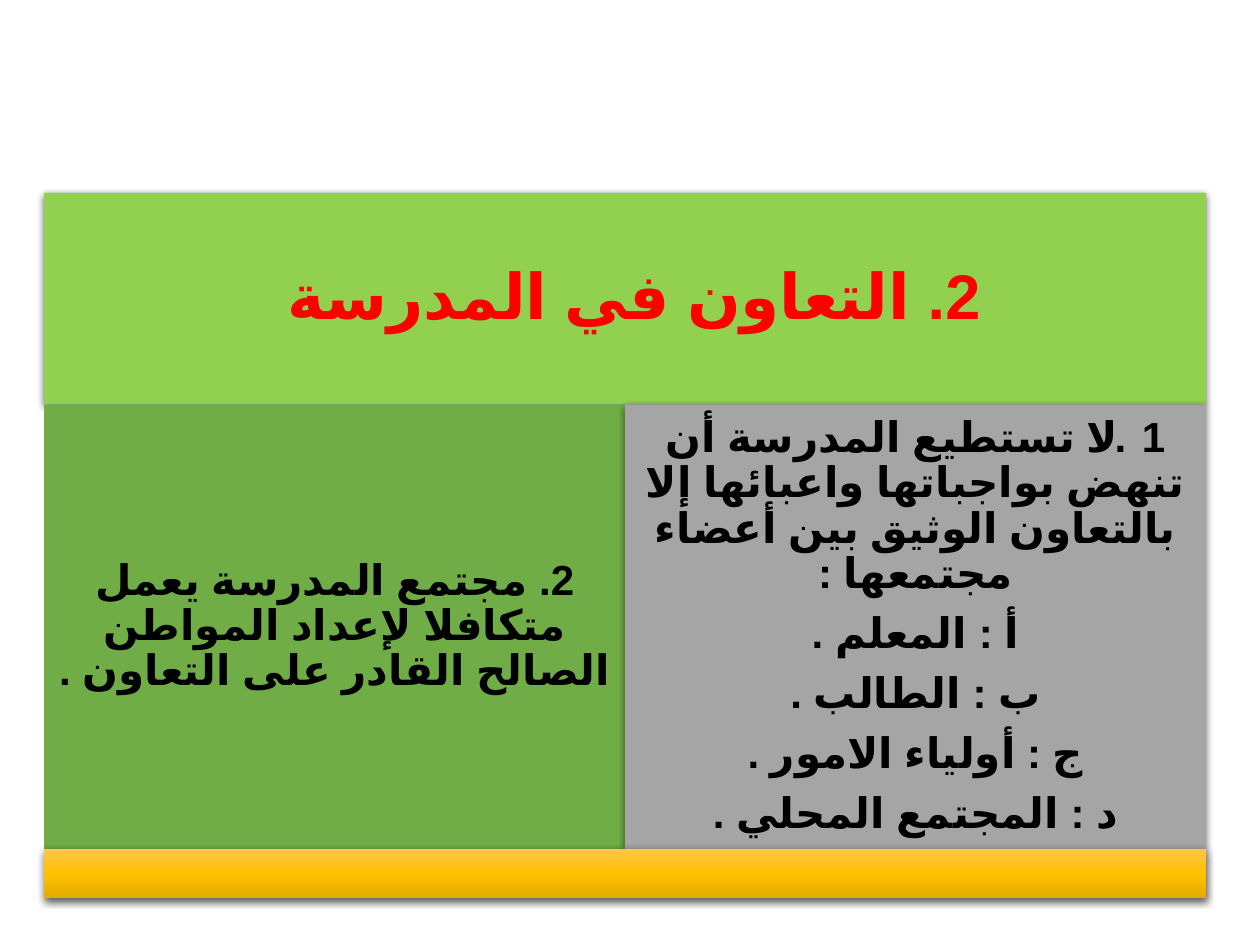
from copy import deepcopy
from dataclasses import dataclass

from lxml.etree import SubElement
from pptx import Presentation
from pptx.dml.color import RGBColor as RGB
from pptx.enum.shapes import MSO_SHAPE as SHAPE
from pptx.enum.text import MSO_ANCHOR as ANCHOR, PP_ALIGN as ALIGN
from pptx.oxml.ns import qn
from pptx.util import Inches, Pt


@dataclass(frozen=True)
class Theme:
    font: str = "Calibri"
    arabic_font: str = "Arial"
    title_size: int = 36
    body_size: int = 24
    title: str = "FF0000"
    body: str = "000000"
    header: str = "92D050"
    left: str = "70AD47"
    right: str = "A5A5A5"
    bar: tuple = ("FFC64B", "FFC000", "E3AB00")


def add_text(sp, lines, size, color, inset):
    """Fill the shape with centred right-to-left paragraphs, one per line."""
    tf = sp.text_frame
    tf.word_wrap = True
    tf.vertical_anchor = ANCHOR.MIDDLE
    tf.margin_left = tf.margin_right = tf.margin_top = tf.margin_bottom = Inches(inset)
    for i, line in enumerate(lines):
        p = tf.add_paragraph() if i else tf.paragraphs[0]
        p.alignment = ALIGN.CENTER
        p.line_spacing = 0.9
        p.space_after = Pt(size * 0.35)
        p._p.get_or_add_pPr().set("rtl", "1")
        r = p.add_run()
        r.text = line
        r.font.name, r.font.size, r.font.bold = theme.font, Pt(size), True
        r.font.color.rgb = RGB.from_string(color)
        props = r._r.get_or_add_rPr()
        props.set("lang", "ar-IQ")
        SubElement(props, qn("a:cs"), typeface=theme.arabic_font)


def add_block(col, row, span, fill, shadow=True):
    """Place a rectangle on the grid; a tuple of colours makes a downward gradient."""
    sp = slide.shapes.add_shape(
        SHAPE.RECTANGLE, Inches(LEFT + col * COL_W), Inches(ROWS[row]),
        Inches(span * COL_W), Inches(ROWS[row + 1] - ROWS[row]))
    sp.line.fill.background()
    sp.shadow.inherit = False
    if isinstance(fill, tuple):
        sp.fill.gradient()
        sp.fill.gradient_angle = 270
        stops = sp._element.spPr.find(".//" + qn("a:gsLst"))
        stops.append(deepcopy(stops[0]))
        for i, stop in enumerate(sp.fill.gradient_stops):
            stop.color.rgb = RGB.from_string(fill[i])
            stop.position = i / 2
    else:
        sp.fill.solid()
        sp.fill.fore_color.rgb = RGB.from_string(fill)
    if shadow:
        effects = sp._element.spPr.find(qn("a:effectLst"))
        outer = SubElement(effects, qn("a:outerShdw"), blurRad=str(Pt(4.5)),
                           dist=str(Pt(1.5)), dir="5400000", algn="ctr", rotWithShape="0")
        black = SubElement(outer, qn("a:srgbClr"), val="000000")
        SubElement(black, qn("a:alpha"), val="63000")
    return sp


theme = Theme()
LEFT, COL_W = 0.35, 4.61
ROWS = (1.53, 3.21, 6.74, 7.13)

prs = Presentation()
prs.slide_width, prs.slide_height = Inches(10), Inches(7.5)
slide = prs.slides.add_slide(prs.slide_layouts[6])

header = add_block(0, 0, 2, theme.header)
add_text(header, ["2. التعاون في المدرسة "], theme.title_size, theme.title, 0.15)

left = add_block(0, 1, 1, theme.left, shadow=False)
add_text(left, ["2. مجتمع المدرسة يعمل متكافلا لإعداد المواطن الصالح القادر على التعاون ."],
         theme.body_size, theme.body, 0.1)

right = add_block(1, 1, 1, theme.right)
add_text(right, [
    "1. لا تستطيع المدرسة أن تنهض بواجباتها واعبائها إلا بالتعاون الوثيق بين أعضاء مجتمعها :",
    "أ : المعلم .",
    "ب : الطالب .",
    "ج : أولياء الامور .",
    "د : المجتمع المحلي .",
], theme.body_size, theme.body, 0.1)

add_block(0, 2, 2, theme.bar)

prs.save("out.pptx")
